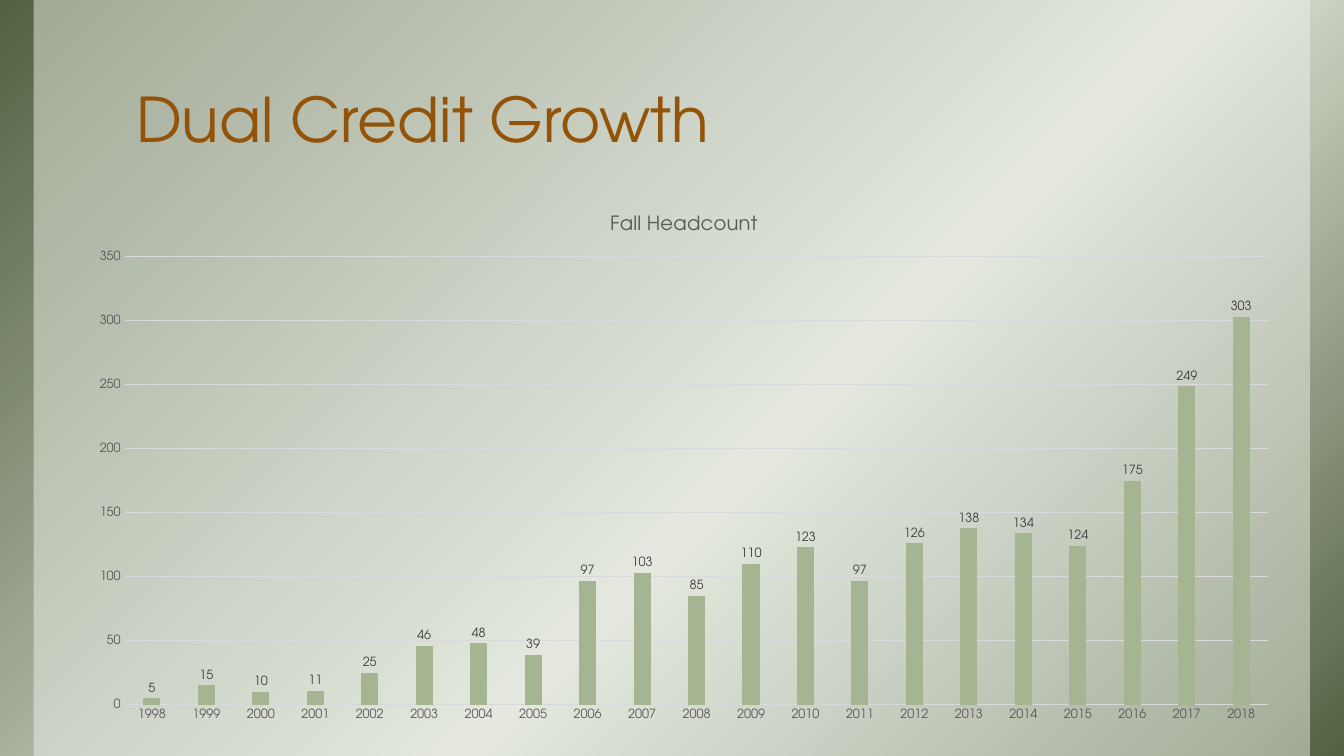
from copy import deepcopy
from dataclasses import dataclass

from lxml.etree import SubElement
from pptx import Presentation
from pptx.chart.data import CategoryChartData as ChartData
from pptx.dml.color import RGBColor as Rgb
from pptx.enum.chart import XL_CHART_TYPE as Kind
from pptx.enum.chart import XL_LABEL_POSITION as Spot
from pptx.enum.chart import XL_TICK_MARK as Tick
from pptx.enum.shapes import MSO_SHAPE as Preset
from pptx.enum.text import MSO_ANCHOR as Anchor
from pptx.oxml.ns import qn
from pptx.util import Cm, Pt


@dataclass(frozen=True)
class Theme:
    face: str = "TeX Gyre Adventor"
    dark: str = "536142"
    light: str = "DBE1D3"
    panel: str = "EDF0E9"
    title: str = "93540A"
    bar: str = "A5B592"
    axis: str = "595959"
    label: str = "404040"
    grid: str = "D9D9D9"
    big: int = 44
    mid: int = 14
    small: int = 9


theme = Theme()


def style(font, size, color):
    font.name = theme.face
    font.size = Pt(size)
    font.bold = False
    font.color.rgb = Rgb.from_string(color)


def add_rect(left, width):
    rect = slide.shapes.add_shape(Preset.RECTANGLE, left, 0, width, deck.slide_height)
    rect.shadow.inherit = False
    rect.line.fill.background()
    return rect


deck = Presentation()
deck.slide_width, deck.slide_height = Cm(33.87), Cm(19.05)
slide = deck.slides.add_slide(deck.slide_layouts[6])

# Diagonal gradient backdrop
back = add_rect(0, deck.slide_width)
back.fill.gradient()
back.fill.gradient_angle = 315
stops = back._element.spPr.find(".//" + qn("a:gsLst"))
stops.append(deepcopy(stops[0]))
shades = [(0, theme.dark), (0.58, theme.light), (1, theme.dark)]
for stop, (place, shade) in zip(back.fill.gradient_stops, shades):
    stop.position = place
    stop.color.rgb = Rgb.from_string(shade)

# Half-transparent panel
panel = add_rect(Cm(0.85), Cm(32.16))
panel.fill.solid()
panel.fill.fore_color.rgb = Rgb.from_string(theme.panel)
tint = panel._element.spPr.find(".//" + qn("a:srgbClr"))
SubElement(tint, qn("a:alpha")).set("val", "50000")

# Title
box = slide.shapes.add_textbox(Cm(3.1), Cm(0.2), Cm(28.22), Cm(3.89))
frame = box.text_frame
frame.word_wrap = True
frame.vertical_anchor = Anchor.BOTTOM
frame.margin_left = frame.margin_right = Cm(0.33)
frame.margin_top = frame.margin_bottom = Cm(0.18)
frame.text = "Dual Credit Growth"
head = frame.paragraphs[0]
head.line_spacing = 0.85
style(head.runs[0].font, theme.big, theme.title)

# Headcount chart
counts = [5, 15, 10, 11, 25, 46, 48, 39, 97, 103, 85,
          110, 123, 97, 126, 138, 134, 124, 175, 249, 303]
data = ChartData()
data.categories = [str(1998 + i) for i in range(len(counts))]
data.add_series("Fall Headcount", counts)
chart = slide.shapes.add_chart(
    Kind.COLUMN_CLUSTERED, Cm(1.9), Cm(4.88), Cm(30.68), Cm(13.54), data).chart
style(chart.font, theme.small, theme.axis)
chart.has_legend = False
chart.has_title = True
text = chart.chart_title.text_frame
text.text = "Fall Headcount"
style(text.paragraphs[0].runs[0].font, theme.mid, theme.axis)

# Columns and their labels
plot = chart.plots[0]
plot.gap_width, plot.overlap = 219, -27
plot.vary_by_categories = False
fill = plot.series[0].format.fill
fill.solid()
fill.fore_color.rgb = Rgb.from_string(theme.bar)
plot.has_data_labels = True
labels = plot.data_labels
labels.show_value = True
labels.position = Spot.OUTSIDE_END
style(labels.font, theme.small, theme.label)

# Axes and grid
years, heads = chart.category_axis, chart.value_axis
for axis in (years, heads):
    axis.major_tick_mark = axis.minor_tick_mark = Tick.NONE
    style(axis.tick_labels.font, theme.small, theme.axis)
heads.minimum_scale, heads.maximum_scale, heads.major_unit = 0, 350, 50
heads.has_major_gridlines = True
heads.format.line.fill.background()
for line in (years.format.line, heads.major_gridlines.format.line):
    line.width = Pt(0.75)
    line.color.rgb = Rgb.from_string(theme.grid)

deck.save("out.pptx")
